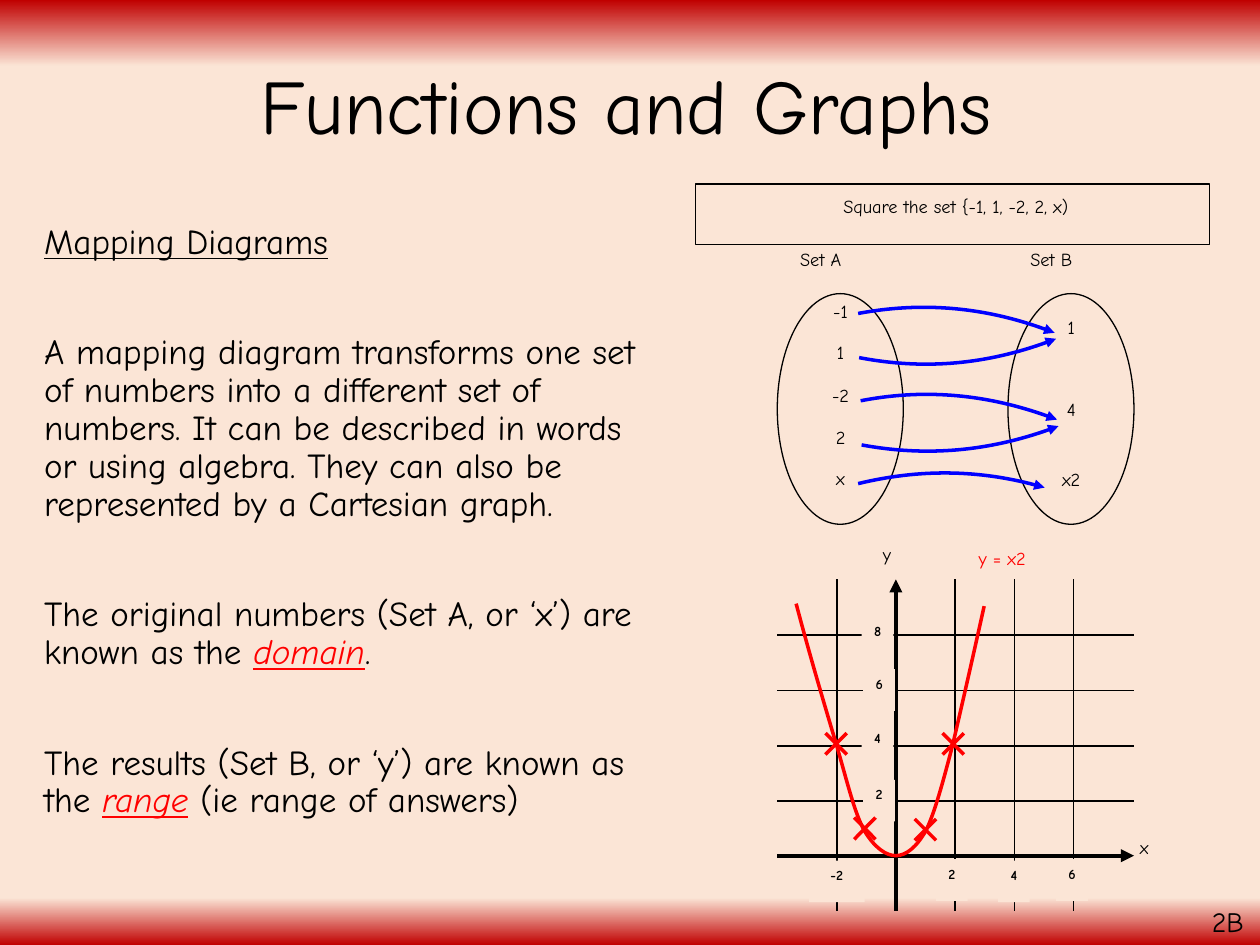
"""Build the mapping diagram and graph slide."""
from dataclasses import dataclass

from lxml import etree
from pptx import Presentation
from pptx.dml.color import RGBColor
from pptx.enum.shapes import MSO_CONNECTOR, MSO_SHAPE
from pptx.enum.text import MSO_ANCHOR, PP_ALIGN
from pptx.oxml.ns import qn
from pptx.util import Cm, Pt

LINE = MSO_CONNECTOR.STRAIGHT
OVAL, RECT = MSO_SHAPE.OVAL, MSO_SHAPE.RECTANGLE
LEFT, MID = PP_ALIGN.LEFT, PP_ALIGN.CENTER
FONT = "Comic Neue"
HUES = {"ink": "000000", "red": "FF0000", "blue": "0000FF",
        "edge": "C00000", "page": "FBE5D6"}
SMALL, TICK = 10.5, 8


@dataclass
class Label:
    text: str
    left: float
    top: float
    width: float
    height: float = 0.4
    size: float = SMALL
    align: PP_ALIGN = MID
    hue: str = "ink"
    bold: bool = False
    fill: bool = False


@dataclass
class Arc:
    end: tuple
    bend: tuple
    sign: int


def size(inch: float) -> int:
    """Turn inches into a length."""
    return Cm(round(inch * 2.54, 2))


def paint(hue: str) -> RGBColor:
    """Look up a colour."""
    return RGBColor.from_string(HUES[hue])


def add_run(para, text: str, points: float, hue: str = "ink", bold: bool = False, key: bool = False):
    """Add one styled run."""
    run = para.add_run()
    run.text = text
    run.font.name, run.font.size, run.font.bold = FONT, Pt(points), bold
    run.font.color.rgb = paint(hue)
    if key:
        run.font.italic = run.font.underline = True
    return run


def add_box(slide, left: float, top: float, width: float, height: float):
    """Add a wrapping text box."""
    box = slide.shapes.add_textbox(*map(size, (left, top, width, height)))
    box.text_frame.word_wrap = True
    return box


def add_label(slide, item: Label) -> None:
    """Draw one label."""
    box = add_box(slide, item.left, item.top, item.width, item.height)
    if item.fill:
        box.fill.solid()
        box.fill.fore_color.rgb = paint("page")
    para = box.text_frame.paragraphs[0]
    para.alignment = item.align
    add_run(para, item.text, item.size, item.hue, item.bold)


def style_line(shape, hue: str, width: float, arrow: bool = False) -> None:
    """Set a stroke, with an arrowhead at its end if asked."""
    shape.line.color.rgb = paint(hue)
    shape.line.width = Pt(width)
    if arrow:
        etree.SubElement(shape.line._get_or_add_ln(), qn("a:tailEnd"), type="triangle")


def add_line(slide, x1: float, y1: float, x2: float, y2: float,
             hue: str = "ink", width: float = 1, arrow: bool = False) -> None:
    """Draw a straight line."""
    line = slide.shapes.add_connector(LINE, *map(size, (x1, y1, x2, y2)))
    style_line(line, hue, width, arrow)
    etree.SubElement(line.element.spPr, qn("a:effectLst"))


def add_frame(slide, kind, left: float, top: float, width: float, height: float) -> None:
    """Draw an unfilled outline."""
    shape = slide.shapes.add_shape(kind, *map(size, (left, top, width, height)))
    shape.shadow.inherit = False
    shape.fill.background()
    style_line(shape, "ink", 0.75)


def add_curve(slide, points: list, hue: str, arrow: bool = False) -> None:
    """Draw joined cubic curves through a start and triples of points."""
    spots = [(size(x), size(y)) for x, y in points]
    maker = slide.shapes.build_freeform(*spots[0])
    maker.add_line_segments(spots[1:], close=False)
    shape = maker.convert_to_shape()
    steps = shape.element.findall(".//" + qn("a:lnTo"))
    for i in range(0, len(steps), 3):
        cubic = etree.Element(qn("a:cubicBezTo"))
        steps[i].addprevious(cubic)
        for step in steps[i:i + 3]:
            cubic.append(step[0])
            step.getparent().remove(step)
    shape.shadow.inherit = False
    shape.fill.background()
    style_line(shape, hue, 2, arrow)


def add_page(slide) -> None:
    """Fade the page to red at the top and bottom."""
    fill = slide.background.fill
    fill.gradient()
    fill.gradient_angle = 270
    stops = slide.element.find(".//" + qn("a:gsLst"))
    for stop in list(stops):
        stops.remove(stop)
    for place, hue in ((0, "edge"), (7, "page"), (95, "page"), (100, "edge")):
        stop = etree.SubElement(stops, qn("a:gs"), pos=str(place * 1000))
        etree.SubElement(stop, qn("a:srgbClr"), val=HUES[hue])


def add_notes(slide) -> None:
    """Write the title and the body text."""
    title = add_box(slide, 0.66, 0.14, 8.62, 1.45).text_frame
    title.vertical_anchor = MSO_ANCHOR.MIDDLE
    title.paragraphs[0].alignment = MID
    title.paragraphs[0].line_spacing = 0.9
    add_run(title.paragraphs[0], "Functions and Graphs", 44)

    body = add_box(slide, 0, 1.73, 5.33, 4.95).text_frame
    body.margin_left = size(0.35)
    head = body.paragraphs[0]
    head.line_spacing = 0.9
    add_run(head, "Mapping Diagrams", 20).font.underline = True
    parts = [
        ("A mapping diagram transforms one set of numbers into a different set of numbers. "
         "It can be described in words or using algebra. "
         "They can also be represented by a Cartesian graph.",),
        ("The original numbers (Set A, or ‘x’) are known as the ", "domain", "."),
        ("The results (Set B, or ‘y’) are known as the ", "range", " (ie range of answers)"),
    ]
    for part in parts:
        para = body.add_paragraph()
        para.line_spacing, para.space_before = 0.9, Pt(41.6)
        for i, text in enumerate(part):
            add_run(para, text, 20, "red" if i == 1 else "ink", key=i == 1)


def add_map(slide) -> None:
    """Draw the two sets and the arrows between them."""
    add_frame(slide, RECT, 5.52, 1.46, 4.08, 0.48)
    add_label(slide, Label("Square the set {-1, 1, -2, 2, x)", 5.42, 1.5, 4.33))
    for name, left in (("Set A", 6.25), ("Set B", 8.08)):
        add_label(slide, Label(name, left, 1.92, 0.92, align=LEFT))
        add_frame(slide, OVAL, left - 0.08, 2.33, 1, 1.83)
    for i, text in enumerate(("-1", "1", "-2", "2", "x")):
        add_label(slide, Label(text, 6.42, 2.33 + i / 3, 0.5))
    for text, top in (("1", 2.46), ("4", 3.11), ("x2", 3.67)):
        add_label(slide, Label(text, 8.25, top, 0.5))
    wide = ((1.56, 0.15), (1.03, 0.25), (0.49, 0.19), (0, 0))
    flat = ((1.48, 0.03), (0.99, 0.15), (0.48, 0.14), (0, 0))
    for arc in (Arc((8.37, 2.64), wide, -1), Arc((8.38, 2.69), wide, 1),
                Arc((8.39, 3.33), wide, -1), Arc((8.4, 3.38), wide, 1),
                Arc((8.29, 3.87), flat, -1)):
        x, y = arc.end
        add_curve(slide, [(x - dx, y + arc.sign * dy) for dx, dy in arc.bend], "blue", True)


def add_graph(slide) -> None:
    """Draw the grid, axes, ticks and parabola."""
    for i in range(4):
        add_line(slide, 6.17, 5.04 + 0.44 * i, 9, 5.04 + 0.44 * i)
    for i in (-1, 1, 2, 3):
        add_line(slide, 7.11 + 0.47 * i, 4.6, 7.11 + 0.47 * i, 7.23)
    add_line(slide, 6.17, 6.79, 9, 6.79, width=2.5, arrow=True)
    add_line(slide, 7.11, 7.23, 7.11, 4.6, width=2.5, arrow=True)
    ticks = [("2", 6.85, 6.19, 0.25), ("4", 6.84, 5.74, 0.25), ("6", 6.85, 5.31, 0.25),
             ("8", 6.84, 4.89, 0.25), ("6", 8.38, 6.82, 0.25), ("4", 7.92, 6.83, 0.25),
             ("2", 7.43, 6.82, 0.25), ("-2", 6.42, 6.83, 0.44)]
    for tick in ticks:
        add_label(slide, Label(*tick, height=0.33, size=TICK, bold=True, fill=True))
    for x, y in ((7.26, 6.5), (6.78, 6.49), (6.55, 5.82), (7.48, 5.82)):
        add_line(slide, x, y, x + 0.17, y + 0.17, "red", 2)
        add_line(slide, x + 0.17, y, x, y + 0.17, "red", 2)
    add_curve(slide, [(6.32, 4.79), (6.43, 5.21), (6.55, 5.62), (6.64, 5.92),
                      (6.73, 6.22), (6.78, 6.44), (6.86, 6.59),
                      (6.94, 6.73), (7.03, 6.79), (7.11, 6.79),
                      (7.19, 6.79), (7.27, 6.73), (7.35, 6.59),
                      (7.42, 6.44), (7.48, 6.22), (7.56, 5.92),
                      (7.63, 5.62), (7.72, 5.22), (7.81, 4.81)], "red")
    add_label(slide, Label("x", 8.95, 6.59, 0.43, align=LEFT))
    add_label(slide, Label("y", 6.91, 4.26, 0.43, align=LEFT))
    add_label(slide, Label("y = x2", 7.67, 4.29, 0.92, align=LEFT, hue="red"))


def main() -> None:
    """Build and save the deck."""
    deck = Presentation()
    deck.slide_width, deck.slide_height = Cm(25.4), Cm(19.05)
    slide = deck.slides.add_slide(deck.slide_layouts[6])
    add_page(slide)
    add_notes(slide)
    add_map(slide)
    add_graph(slide)
    add_label(slide, Label("2B", 9.52, 7.13, 0.56, 0.37, 16, LEFT))
    deck.save("out.pptx")


if __name__ == "__main__":
    main()
